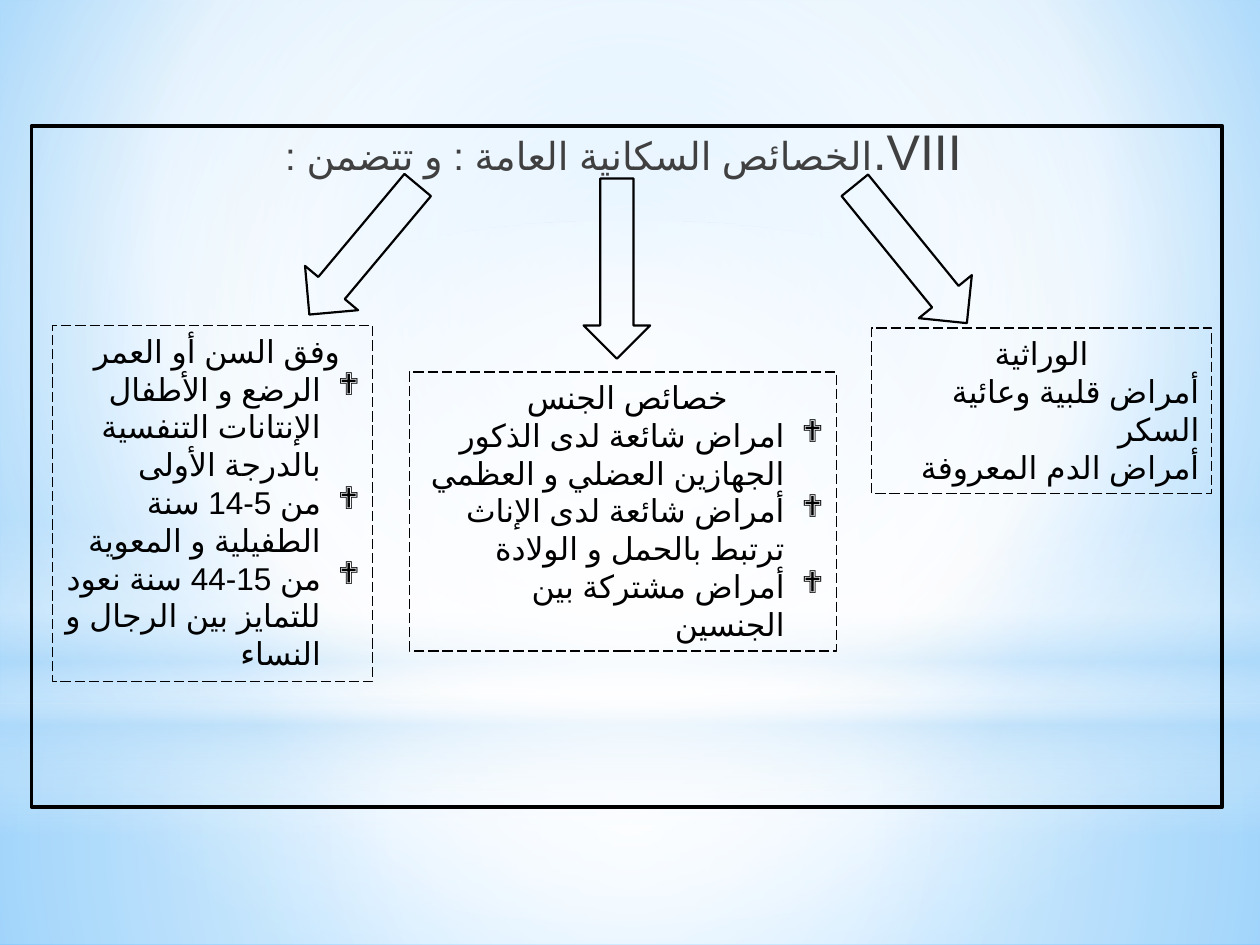
from dataclasses import dataclass

from lxml import etree
from pptx import Presentation
from pptx.dml.color import RGBColor
from pptx.enum import dml, shapes, text
from pptx.oxml import ns
from pptx.util import Pt

FONT = "Roboto"
ARABIC_FONT = "Arial"
BULLET_FONT = "Wingdings"
LANGUAGE = "ar-SY"
INK = "000000"
CENTER_FOCUS = (50, 50, 50, 50)


@dataclass
class Frame:
    left: float
    top: float
    width: float
    height: float

    def lengths(self) -> tuple:
        return Pt(self.left), Pt(self.top), Pt(self.width), Pt(self.height)


@dataclass
class Glow:
    kind: shapes.MSO_SHAPE
    frame: Frame
    stops: list  # (position %, colour, opacity %)
    focus: tuple = ()  # circular focus; empty means top to bottom


@dataclass
class Card:
    frame: Frame
    heading: str
    lines: list
    bulleted: bool = True


@dataclass
class Arrow:
    frame: Frame
    rotation: float = 0


GLOWS = [
    Glow(shapes.MSO_SHAPE.RECTANGLE, Frame(0, 402, 720, 138),
         [(0, "FFFFFF", 91), (37, "FFFFFF", 76), (100, "B4DCFA", 79)], CENTER_FOCUS),
    Glow(shapes.MSO_SHAPE.RECTANGLE, Frame(0, 0, 720, 402),
         [(0, "FFFFFF", 89), (48, "FFFFFF", 62), (100, "B4DCFA", 79)], CENTER_FOCUS),
    Glow(shapes.MSO_SHAPE.RECTANGLE, Frame(0, 297, 720, 180),
         [(0, "FFFFFF", 0), (29, "FFFFFF", 30), (45, "B4DCFA", 40),
          (55, "FFFFFF", 26), (65, "B4DCFA", 60), (100, "FFFFFF", 0)]),
    Glow(shapes.MSO_SHAPE.OVAL, Frame(0, 126, 720, 402),
         [(0, "FFFFFF", 100), (56, "FFFFFF", 0)], CENTER_FOCUS),
]

CARDS = [
    Card(Frame(498, 187.5, 194.5, 94.5), "الوراثية",
         ["أمراض قلبية وعائية السكر", "أمراض الدم المعروفة"], bulleted=False),
    Card(Frame(234, 212.5, 244, 159.5), "خصائص الجنس ",
         ["امراض شائعة لدى الذكور الجهازين العضلي و العظمي",
          "أمراض شائعة لدى الإناث ترتبط بالحمل و الولادة",
          "أمراض مشتركة بين الجنسين"]),
    Card(Frame(30, 186, 183, 203.5), "وفق السن أو العمر ",
         ["الرضع و الأطفال الإنتانات التنفسية بالدرجة الأولى",
          "من 5-14 سنة الطفيلية و المعوية",
          "من 15-44 سنة نعود للتمايز بين الرجال و النساء"]),
]

ARROWS = [
    Arrow(Frame(501, 94.5, 39, 101.5), 320.9),
    Arrow(Frame(333.5, 102, 38, 103)),
    Arrow(Frame(188, 94.5, 39.5, 96.5), 39.9),
]


def color(value: str) -> RGBColor:
    return RGBColor.from_string(value)


def add_xml(parent, tag: str, **attributes):
    return etree.SubElement(parent, ns.qn(f"a:{tag}"),
                            {name: str(value) for name, value in attributes.items()})


def paint_gradient(fill, parent, stops: list, focus: tuple) -> None:
    """Give a fill the stops, either circular or running downwards."""
    fill.gradient()
    gradient = parent.find(ns.qn("a:gradFill"))
    for child in list(gradient):
        gradient.remove(child)
    stop_list = add_xml(gradient, "gsLst")
    for position, value, opacity in stops:
        stop = add_xml(stop_list, "gs", pos=position * 1000)
        shade = add_xml(stop, "srgbClr", val=value)
        if opacity < 100:
            add_xml(shade, "alpha", val=opacity * 1000)
    if focus:
        circle = add_xml(gradient, "path", path="circle")
        sides = {side: amount * 1000 for side, amount in zip("ltrb", focus)}
        add_xml(circle, "fillToRect", **sides)
    else:
        add_xml(gradient, "lin", ang=90 * 60000, scaled=0)


def draw_outline(shape, width: float) -> None:
    shape.line.color.rgb = color(INK)
    shape.line.width = Pt(width)


def write_line(para, words: str, size: float, value: str, align) -> None:
    """Write one right-to-left paragraph."""
    para.alignment = align
    para._p.get_or_add_pPr().set("rtl", "1")
    span = para.add_run()
    span.text = words
    span.font.name = FONT
    span.font.size = Pt(size)
    span.font.color.rgb = color(value)
    properties = span._r.get_or_add_rPr()
    properties.set("lang", LANGUAGE)
    add_xml(properties, "cs", typeface=ARABIC_FONT)


def hang(para, margin: float, indent: float):
    properties = para._p.get_or_add_pPr()
    properties.set("marL", str(Pt(margin)))
    properties.set("indent", str(Pt(indent)))
    return properties


def draw_glow(page, glow: Glow) -> None:
    shape = page.shapes.add_shape(glow.kind, *glow.frame.lengths())
    shape.shadow.inherit = False
    shape.line.fill.background()
    paint_gradient(shape.fill, shape._element.spPr, glow.stops, glow.focus)


def draw_heading(page, box, words: str, frame: Frame) -> None:
    page.shapes._spTree.append(box._element)  # in front of the glows
    box.left, box.top, box.width, box.height = frame.lengths()
    draw_outline(box, 2.25)
    box.text_frame.vertical_anchor = text.MSO_ANCHOR.TOP
    para = box.text_frame.paragraphs[0]
    para.space_before, para.space_after = Pt(4.4), Pt(3)
    write_line(para, words, 22, "404040", text.PP_ALIGN.CENTER)
    properties = hang(para, 44, -40)
    add_xml(properties, "buSzPct", val=130000)
    add_xml(properties, "buAutoNum", type="romanUcPeriod", startAt=8)


def draw_card(page, card: Card) -> None:
    box = page.shapes.add_textbox(*card.frame.lengths())
    draw_outline(box, 0.75)
    box.line.dash_style = dml.MSO_LINE.LONG_DASH
    frame = box.text_frame
    frame.word_wrap = True
    frame.auto_size = text.MSO_AUTO_SIZE.SHAPE_TO_FIT_TEXT
    write_line(frame.paragraphs[0], card.heading, 18, INK, text.PP_ALIGN.CENTER)
    for line in card.lines:
        para = frame.add_paragraph()
        write_line(para, line, 18, INK, text.PP_ALIGN.RIGHT)
        if card.bulleted:
            properties = hang(para, 22.5, -22.5)
            add_xml(properties, "buFont", typeface=BULLET_FONT)
            add_xml(properties, "buChar", char="❖")


def draw_arrow(page, arrow: Arrow) -> None:
    shape = page.shapes.add_shape(shapes.MSO_SHAPE.DOWN_ARROW, *arrow.frame.lengths())
    shape.shadow.inherit = False
    shape.fill.background()
    shape.rotation = arrow.rotation
    draw_outline(shape, 1.25)


def main() -> None:
    deck = Presentation()
    deck.slide_width, deck.slide_height = Pt(720), Pt(540)
    page = deck.slides.add_slide(deck.slide_layouts[1])
    title, body = page.placeholders
    title._element.getparent().remove(title._element)

    # Backdrop
    backdrop = page.background.fill
    paint_gradient(backdrop, page._element.cSld.bg.bgPr,
                   [(0, "9ED5FF", 100), (60, "FFFFFF", 100), (100, "5BB9FF", 100)],
                   (20, 10, 20, 60))
    for glow in GLOWS:
        draw_glow(page, glow)

    # Framed heading, the three groups and the arrows to them
    draw_heading(page, body, "الخصائص السكانية العامة : و تتضمن :",
                 Frame(18, 72, 680.5, 389))
    for card in CARDS:
        draw_card(page, card)
    for arrow in ARROWS:
        draw_arrow(page, arrow)

    deck.save("out.pptx")


if __name__ == "__main__":
    main()
